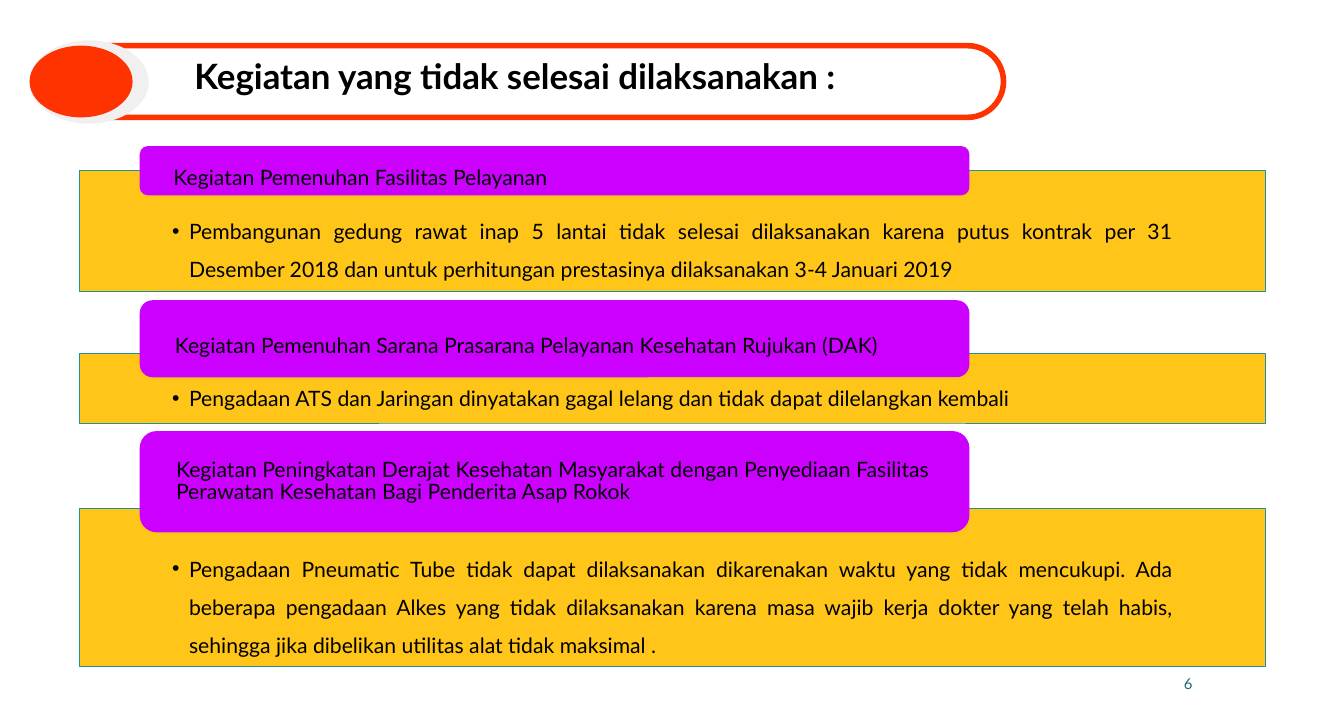
from lxml.etree import SubElement
from pptx import Presentation
from pptx.dml.color import RGBColor
from pptx.enum.shapes import MSO_SHAPE as Preset
from pptx.enum.text import MSO_ANCHOR as Anchor, MSO_AUTO_SIZE as AutoSize, PP_ALIGN as Align
from pptx.oxml.ns import qn
from pptx.util import Inches, Pt

COLORS = {
    "panel": "FFC000",
    "panel_line": "1B91A1",
    "heading": "CC00FF",
    "accent": "FF3300",
    "halo": "F1EFF0",
    "text": "000000",
    "number": "1F696F",
}
COLUMNS, ROWS = 150, 80
COMPARISON_LAYOUT = 4

ACTIVITIES = [
    {
        "heading": "Kegiatan Pemenuhan Fasilitas Pelayanan",
        "item": "Pembangunan gedung rawat inap 5 lantai tidak selesai dilaksanakan karena putus kontrak "
                "per 31 Desember 2018 dan untuk perhitungan prestasinya dilaksanakan 3-4 Januari 2019",
        "heading_rows": (16.3, 5.5), "panel_rows": (19, 13.5),
        "heading_spacing": 1.5, "item_spacing": 1.5,
    },
    {
        "heading": "Kegiatan Pemenuhan Sarana Prasarana Pelayanan Kesehatan Rujukan (DAK)",
        "item": "Pengadaan ATS dan Jaringan dinyatakan gagal lelang dan tidak dapat dilelangkan kembali",
        "heading_rows": (33.5, 8.6), "panel_rows": (39.4, 7.8),
        "heading_spacing": 1.5, "item_spacing": 0.9,
    },
    {
        "heading": "Kegiatan Peningkatan Derajat Kesehatan Masyarakat dengan Penyediaan Fasilitas "
                   "Perawatan Kesehatan Bagi Penderita Asap Rokok",
        "item": "Pengadaan Pneumatic Tube tidak dapat dilaksanakan dikarenakan waktu yang tidak mencukupi. "
                "Ada beberapa pengadaan Alkes yang tidak dilaksanakan karena masa wajib kerja dokter yang "
                "telah habis, sehingga jika dibelikan utilitas alat tidak maksimal .",
        "heading_rows": (48.1, 11.3), "panel_rows": (56.7, 17.6),
        "heading_spacing": 0.9, "item_spacing": 1.5,
    },
]


def apply(target, values):
    for name, value in values.items():
        setattr(target, name, value)


class SlideBuilder:
    font = "Lato"

    def __init__(self, deck, layout):
        self.page = deck.slides.add_slide(deck.slide_layouts[layout])
        self.column = deck.slide_width / COLUMNS
        self.row = deck.slide_height / ROWS

    def area(self, left, top, width, height):
        return (round(left * self.column), round(top * self.row),
                round(width * self.column), round(height * self.row))

    def place(self, shape, cells):
        apply(shape, dict(zip(("left", "top", "width", "height"), self.area(*cells))))

    def paint(self, shape, fill=None, line=None, weight=1, opacity=None):
        if fill:
            shape.fill.solid()
            shape.fill.fore_color.rgb = RGBColor.from_string(COLORS[fill])
        else:
            shape.fill.background()
        if opacity:
            color = shape._element.spPr.find(qn("a:solidFill")).find(qn("a:srgbClr"))
            SubElement(color, qn("a:alpha"), val=str(opacity * 1000))
        if line:
            shape.line.color.rgb = RGBColor.from_string(COLORS[line])
            shape.line.width = Pt(weight)
        else:
            shape.line.fill.background()

    def label(self, shape, text, size, color="text", bold=False, align=Align.LEFT,
              anchor=Anchor.MIDDLE, spacing=1.0, insets=(0.1, 0.05, 0.1, 0.05), bullet=False):
        frame = shape.text_frame
        margins = ("margin_left", "margin_top", "margin_right", "margin_bottom")
        apply(frame, {"word_wrap": True, "auto_size": AutoSize.NONE, "vertical_anchor": anchor})
        apply(frame, dict(zip(margins, map(Inches, insets))))
        para = frame.paragraphs[0]
        if bullet:
            props = para._p.get_or_add_pPr()
            props.set("marL", str(Inches(0.19)))
            props.set("indent", str(-Inches(0.19)))
            SubElement(props, qn("a:buChar"), char="•")
        apply(para, {"alignment": align, "line_spacing": spacing, "space_before": Pt(0)})
        span = para.add_run()
        span.text = text
        apply(span.font, {"name": self.font, "size": Pt(size), "bold": bold})
        span.font.color.rgb = RGBColor.from_string(COLORS[color])

    def shape(self, preset, cells, **paint):
        shape = self.page.shapes.add_shape(preset, *self.area(*cells))
        shape.shadow.inherit = False
        self.paint(shape, **paint)
        return shape

    def title(self, text, cells):
        title = self.page.shapes.title
        self.place(title, cells)
        self.label(title, text, 28, bold=True, spacing=0.9)

    def panel(self, body, text, rows, spacing):
        self.place(body, (8.9, rows[0], 132.3, rows[1]))
        self.paint(body, fill="panel", line="panel_line", weight=0.5, opacity=90)
        self.label(body, text, 17, align=Align.JUSTIFY, anchor=Anchor.TOP,
                   spacing=spacing, insets=(1.03, 0.39, 1.03, 0.13), bullet=True)

    def heading(self, text, rows, spacing):
        heading = self.shape(Preset.ROUNDED_RECTANGLE, (15.6, rows[0], 92.6, rows[1]), fill="heading")
        self.label(heading, text, 17, spacing=spacing, insets=(0.35, 0, 0.35, 0))

    def banner(self):
        pill = self.shape(Preset.ROUNDED_RECTANGLE, (4.9, 5.1, 107.1, 8), line="accent", weight=4.5)
        pill.adjustments[0] = 0.5
        self.shape(Preset.OVAL, (3.3, 4.5, 13.3, 9.3), fill="halo")
        self.shape(Preset.OVAL, (3.3, 5.1, 11.5, 8), fill="accent")

    def number(self, text, cells):
        box = self.page.shapes.add_textbox(*self.area(*cells))
        self.label(box, text, 12, color="number", align=Align.RIGHT)


def main():
    deck = Presentation()
    apply(deck, {"slide_width": Inches(15), "slide_height": Inches(8)})
    builder = SlideBuilder(deck, COMPARISON_LAYOUT)
    builder.title("Kegiatan yang tidak selesai dilaksanakan :", (20.7, 6.1, 81.6, 5.3))
    bodies = list(builder.page.placeholders)[1:]
    for activity, body in zip(ACTIVITIES, bodies):
        builder.panel(body, activity["item"], activity["panel_rows"], activity["item_spacing"])
        builder.heading(activity["heading"], activity["heading_rows"], activity["heading_spacing"])
    for spare in bodies[len(ACTIVITIES):]:
        spare._element.getparent().remove(spare._element)
    builder.banner()
    builder.number("6", (99.1, 74.1, 35, 4.3))
    deck.save("out.pptx")


if __name__ == "__main__":
    main()
